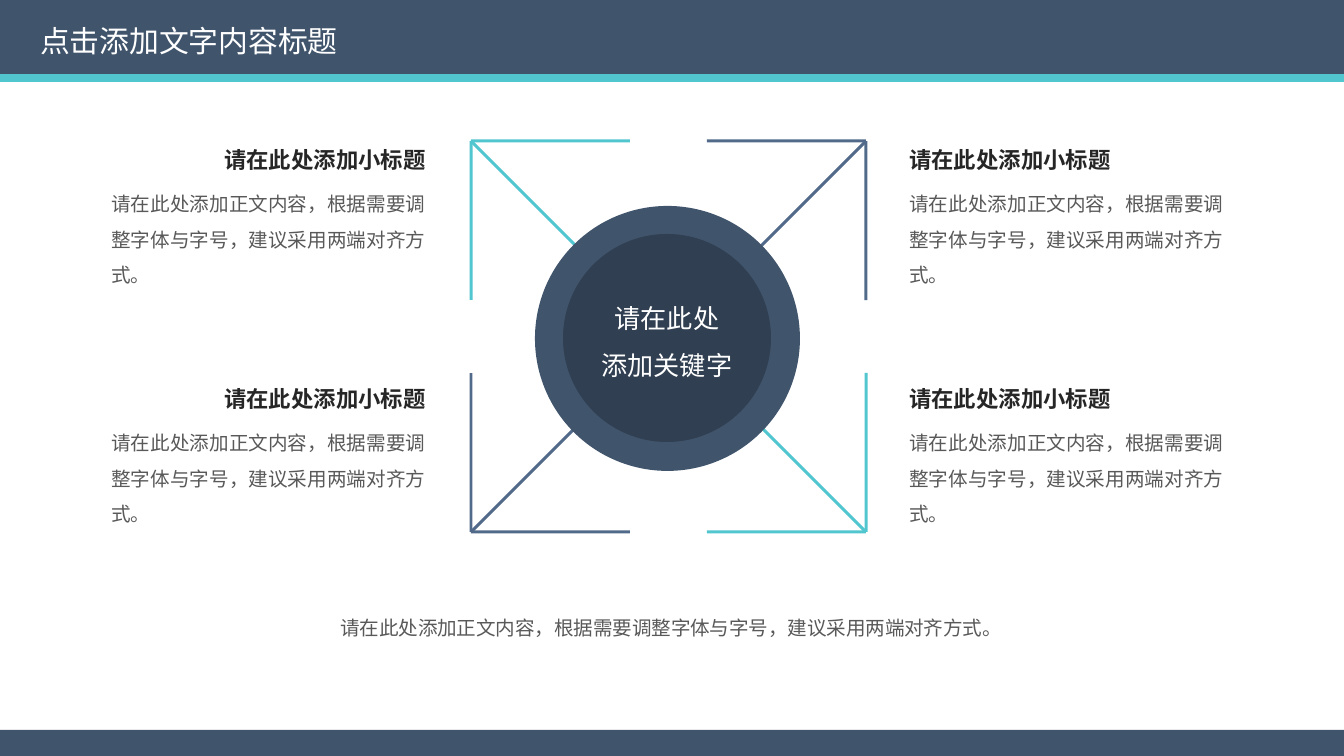
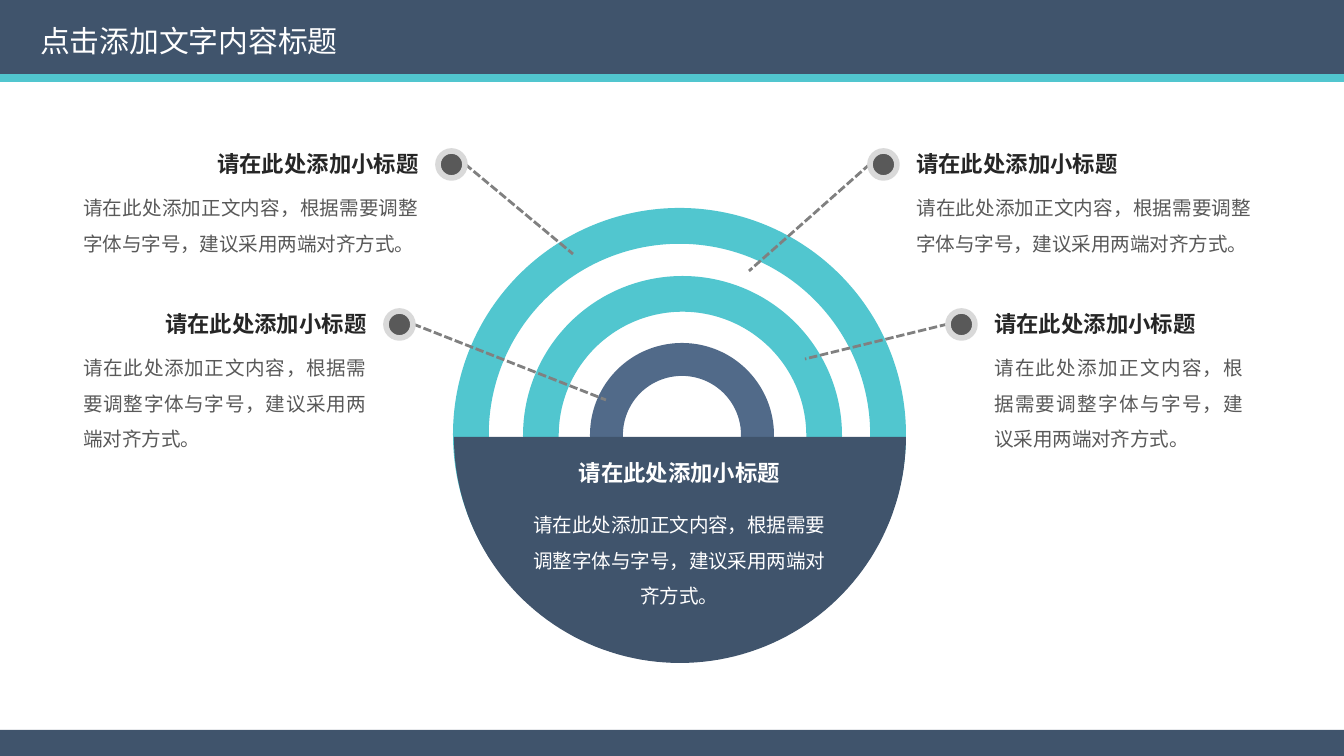
"""Build two slides of captions set around a central round figure."""
import math
import lxml.etree
import pptx
import pptx.util
import pptx.dml.color
import pptx.enum.dml
import pptx.enum.shapes
import pptx.enum.text
import pptx.oxml.ns

HEAD = "点击添加文字内容标题"
SUB = "请在此处添加小标题"
BODY = "请在此处添加正文内容，根据需要调整字体与字号，建议采用两端对齐方式。"
KEY = ["请在此处", "添加关键字"]

THEME = {
    "font": "Noto Sans CJK SC",
    "navy": "40546C", "teal": "51C6CF", "blue": "516A89", "deep": "303F51",
    "white": "FFFFFF", "ink": "262626", "gray": "595959",
    "halo": "D9D9D9", "dash": "808080",
    "head": {"size": 16}, "key": {"size": 14},
    "sub": {"size": 12, "bold": True}, "body": {"size": 10.5},
}

WIDE, HIGH = 1344, 756
BANDS = [(0, 74, "navy"), (74, 8, "teal"), (730, 26, "navy")]

ARM, SLANT, THIN = 159, 265, 3
CORNERS = [
    (471, 141, 1, 1, "teal"), (866, 141, -1, 1, "blue"),
    (471, 532, 1, -1, "blue"), (866, 532, -1, -1, "teal"),
]
DISKS = [(535, 206, 265, "navy"), (563, 234, 208, "deep")]
# side, inner edge, top, title width, body width, body lines
CROSS = [(side, edge, top, 309, 341, 3)
         for side, edge in ((1, 896), (-1, 439)) for top in (140, 379)]

RINGS = [(453, 208, 453, 0.079, "teal"), (523, 276, 319, 0.112, "teal"),
         (590, 343, 184, 0.179, "blue")]
BOWL = (680, 437, 226)
DOT, GAP = 27, 6
NOTES = [
    ((-1, 432, 144, 263, 362, 2), (573, 254)),
    ((-1, 380, 304, 263, 310, 3), (606, 400)),
    ((1, 903, 144, 276, 362, 2), (749, 271)),
    ((1, 981, 304, 276, 276, 3), (805, 359)),
]

KIND = pptx.enum.shapes.MSO_SHAPE
ALIGN = pptx.enum.text.PP_ALIGN
FIT = pptx.enum.text.MSO_AUTO_SIZE


def px(num):
    """Turn pixels into EMU."""
    return pptx.util.Emu(round(num * 914400 / 134.4))


def hue(name):
    """Give the theme colour of that name."""
    return pptx.dml.color.RGBColor.from_string(THEME[name])


def paint(shape, fill, line=None):
    """Fill a shape, with an optional halo line."""
    shape.shadow.inherit = False
    shape.fill.solid()
    shape.fill.fore_color.rgb = hue(fill)
    if line:
        shape.line.color.rgb = hue(line)
        shape.line.width = pptx.util.Pt(3)
    else:
        shape.line.fill.background()
    return shape


def draw(slide, kind, box, fill, line=None):
    """Add a painted preset shape."""
    return paint(slide.shapes.add_shape(kind, *map(px, box)), fill, line)


def write(slide, box, rows, style, tint, align=ALIGN.LEFT, space=None, wrap=True):
    """Add a text box with one paragraph a row."""
    frame = slide.shapes.add_textbox(*map(px, box)).text_frame
    frame.word_wrap = wrap
    frame.auto_size = FIT.SHAPE_TO_FIT_TEXT
    for num, row in enumerate(rows):
        para = frame.paragraphs[0] if num == 0 else frame.add_paragraph()
        para.alignment = align
        para.line_spacing = space
        run = para.add_run()
        run.text = row
        look = {**THEME[style], "name": THEME["font"]}
        look["size"] = pptx.util.Pt(look["size"])
        for key, val in look.items():
            setattr(run.font, key, val)
        run.font.color.rgb = hue(tint)
        east = lxml.etree.SubElement(run._r.get_or_add_rPr(), pptx.oxml.ns.qn("a:ea"))
        east.set("typeface", THEME["font"])


def start(deck):
    """Add a slide with the shared bands and title."""
    slide = deck.slides.add_slide(deck.slide_layouts[6])
    for top, high, fill in BANDS:
        draw(slide, KIND.RECTANGLE, (0, top, WIDE, high), fill)
    write(slide, (27, 16, 329, 49), [HEAD], "head", "white", wrap=False)
    return slide


def note(slide, side, edge, top, wide, span, lines):
    """Add a caption and its body on one side of an edge."""
    left = side < 0
    write(slide, (edge - wide * left, top, wide, 40), [SUB], "sub", "ink",
          ALIGN.RIGHT if left else ALIGN.LEFT)
    write(slide, (edge - span * left, top + 34, span, 13 + 36 * lines), [BODY],
          "body", "gray", ALIGN.JUSTIFY, 1.5)


def bar(slide, mid, row, size, turn, fill):
    """Add a thin bar turned about its middle."""
    box = (mid - size / 2, row - THIN / 2, size, THIN)
    draw(slide, KIND.RECTANGLE, box, fill).rotation = turn


def cross(deck):
    """Build the slide with four corners around a disk."""
    slide = start(deck)
    for x, y, dx, dy, fill in CORNERS:
        half, lean = ARM / 2, SLANT / 2 / math.sqrt(2)
        turn = dx * dy
        bar(slide, x + dx * lean, y + dy * lean, SLANT, 45 * turn, fill)
        bar(slide, x + dx * half, y, ARM, 0, fill)
        bar(slide, x, y + dy * half, ARM, 90 * turn, fill)
    for x, y, size, fill in DISKS:
        draw(slide, KIND.OVAL, (x, y, size, size), fill)
    write(slide, (563, 280, 208, 109), KEY, "key", "white", ALIGN.CENTER, 1.5)
    for item in CROSS:
        note(slide, *item)
    write(slide, (255, 609, 833, 38), [BODY], "body", "gray", ALIGN.CENTER)


def bowl(slide):
    """Add the lower half disk."""
    x, y, size = BOWL
    arc = [(px(x + size * math.cos(math.radians(deg))),
            px(y + size * math.sin(math.radians(deg)))) for deg in range(0, 181, 2)]
    pen = slide.shapes.build_freeform(*arc[0])
    pen.add_line_segments(arc[1:], close=True)
    paint(pen.convert_to_shape(), "navy")


def lead(slide, *ends):
    """Add a dashed line."""
    line = slide.shapes.add_connector(
        pptx.enum.shapes.MSO_CONNECTOR.STRAIGHT, *map(px, ends))
    line.line.color.rgb = hue("dash")
    look = {"width": pptx.util.Pt(1.5),
            "dash_style": pptx.enum.dml.MSO_LINE.SQUARE_DOT}
    for key, val in look.items():
        setattr(line.line, key, val)
    lxml.etree.SubElement(line._element.spPr, pptx.oxml.ns.qn("a:effectLst"))


def arches(deck):
    """Build the slide with rings over a half disk."""
    slide = start(deck)
    for x, y, size, thick, fill in RINGS:
        ring = draw(slide, KIND.DONUT, (x, y, size, size), fill)
        ring.adjustments[0] = thick
    bowl(slide)
    write(slide, (554, 453, 251, 40), [SUB], "sub", "white", ALIGN.CENTER)
    write(slide, (519, 495, 321, 121), [BODY], "body", "white", ALIGN.CENTER, 1.5)
    for item, end in NOTES:
        side, edge, top = item[:3]
        near = edge - side * GAP
        far = near - side * DOT
        lead(slide, far, top + 20, *end)
        draw(slide, KIND.OVAL, (min(near, far), top + 7, DOT, DOT), "gray", "halo")
        note(slide, *item)


def main():
    """Build and save the deck."""
    deck = pptx.Presentation()
    deck.slide_width, deck.slide_height = px(WIDE), px(HIGH)
    cross(deck)
    arches(deck)
    deck.save("out.pptx")


if __name__ == "__main__":
    main()
